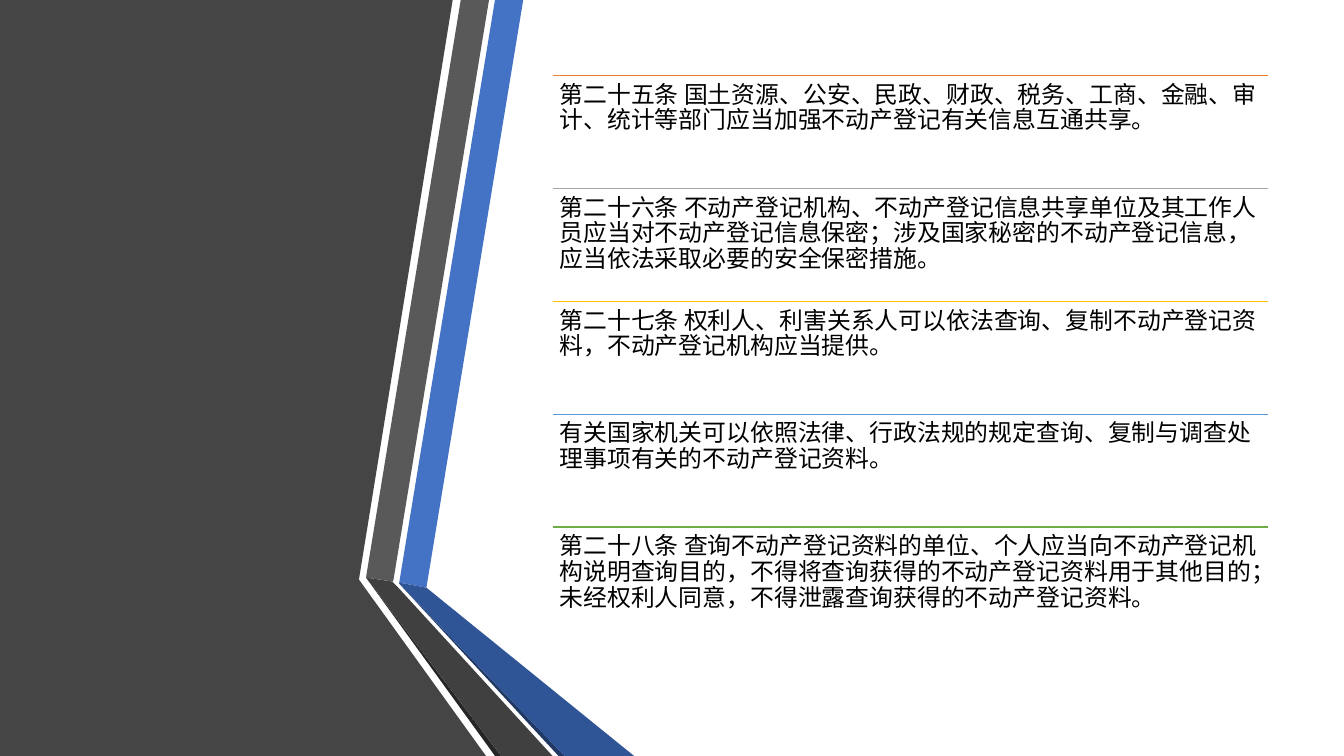
from lxml.etree import SubElement
from pptx import Presentation
from pptx.dml.color import RGBColor as RGB
from pptx.enum.shapes import MSO_CONNECTOR as Link
from pptx.oxml.ns import qn
from pptx.util import Pt

PX = 9144  # EMU per px, 100 px to the inch
WIDTH, HEIGHT = 1333, 750
FONT = "Noto Sans CJK SC"

BLACK = RGB(0x00, 0x00, 0x00)
PANEL = RGB(0x45, 0x45, 0x45)
BLUE = RGB(0x44, 0x72, 0xC4)
NAVY = RGB(0x20, 0x38, 0x64)
DEEP = RGB(0x2F, 0x55, 0x97)
GRAY = RGB(0x59, 0x59, 0x59)
DARK = RGB(0x40, 0x40, 0x40)
COAL = RGB(0x26, 0x26, 0x26)
ORANGE = RGB(0xED, 0x7D, 0x31)
SILVER = RGB(0xA5, 0xA5, 0xA5)
GOLD = RGB(0xFF, 0xC0, 0x00)
SKY = RGB(0x5B, 0x9B, 0xD5)
GREEN = RGB(0x70, 0xAD, 0x47)

BANDS = [
    (PANEL, [(0, 0), (449, 0), (356, 575), (482, 750), (0, 750)]),
    (BLUE, [(396, 578), (423, 583), (519, 0), (491, 0)]),
    (GRAY, [(485, 0), (457, 0), (363, 573), (390, 577)]),
    (COAL, [(363, 573), (491, 750), (497, 750)]),
    (NAVY, [(396, 579), (554, 750), (560, 750)]),
    (DEEP, [(396, 578), (396, 579), (560, 750), (629, 750), (423, 583)]),
    (DARK, [(548, 750), (395, 583), (389, 577), (363, 573), (497, 750)]),
]

RULES = [
    (ORANGE, "第二十五条 国土资源、公安、民政、财政、税务、工商、金融、审计、统计等部门"
             "应当加强不动产登记有关信息互通共享。"),
    (SILVER, "第二十六条 不动产登记机构、不动产登记信息共享单位及其工作人员应当对"
             "不动产登记信息保密；涉及国家秘密的不动产登记信息，"
             "应当依法采取必要的安全保密措施。"),
    (GOLD, "第二十七条 权利人、利害关系人可以依法查询、复制不动产登记资料，"
           "不动产登记机构应当提供。"),
    (SKY, "有关国家机关可以依照法律、行政法规的规定查询、复制与调查处理事项有关的"
          "不动产登记资料。"),
    (GREEN, "第二十八条 查询不动产登记资料的单位、个人应当向不动产登记机构说明查询目的，"
            "不得将查询获得的不动产登记资料用于其他目的；"
            "未经权利人同意，不得泄露查询获得的不动产登记资料。"),
]
LEFT, TOP, WIDE, ROW, INSET = 548, 75, 710, 112, 7


def add_band(shapes, color, points):
    pen = shapes.build_freeform(*points[0], scale=PX)
    pen.add_line_segments(points[1:], close=True)
    band = pen.convert_to_shape()
    band.shadow.inherit = False
    band.fill.solid()
    band.fill.fore_color.rgb = color
    band.line.fill.background()


def add_line(shapes, color, top):
    line = shapes.add_connector(
        Link.STRAIGHT, LEFT * PX, top * PX, (LEFT + WIDE) * PX, top * PX)
    line.line.color.rgb = color
    line.line.width = Pt(1)
    SubElement(line._element.spPr, qn("a:effectLst"))


def add_rule(shapes, text, top):
    box = shapes.add_textbox(LEFT * PX, top * PX, WIDE * PX, ROW * PX)
    frame = box.text_frame
    frame.word_wrap = True
    frame.margin_left = frame.margin_right = INSET * PX
    frame.margin_top = frame.margin_bottom = INSET * PX
    para = frame.paragraphs[0]
    para.text = text
    para.line_spacing = 0.9
    font = para.font
    font.size = Pt(17)
    font.color.rgb = BLACK
    font.name = FONT
    props = para._p.pPr.find(qn("a:defRPr"))
    SubElement(props, qn("a:ea"), typeface=FONT)


def main():
    deck = Presentation()
    deck.slide_width, deck.slide_height = WIDTH * PX, HEIGHT * PX
    shapes = deck.slides.add_slide(deck.slide_layouts[6]).shapes
    for color, points in BANDS:
        add_band(shapes, color, points)
    for i, (color, text) in enumerate(RULES):
        top = TOP + i * ROW
        add_line(shapes, color, top)
        add_rule(shapes, text, top)
    deck.save("out.pptx")


if __name__ == "__main__":
    main()
